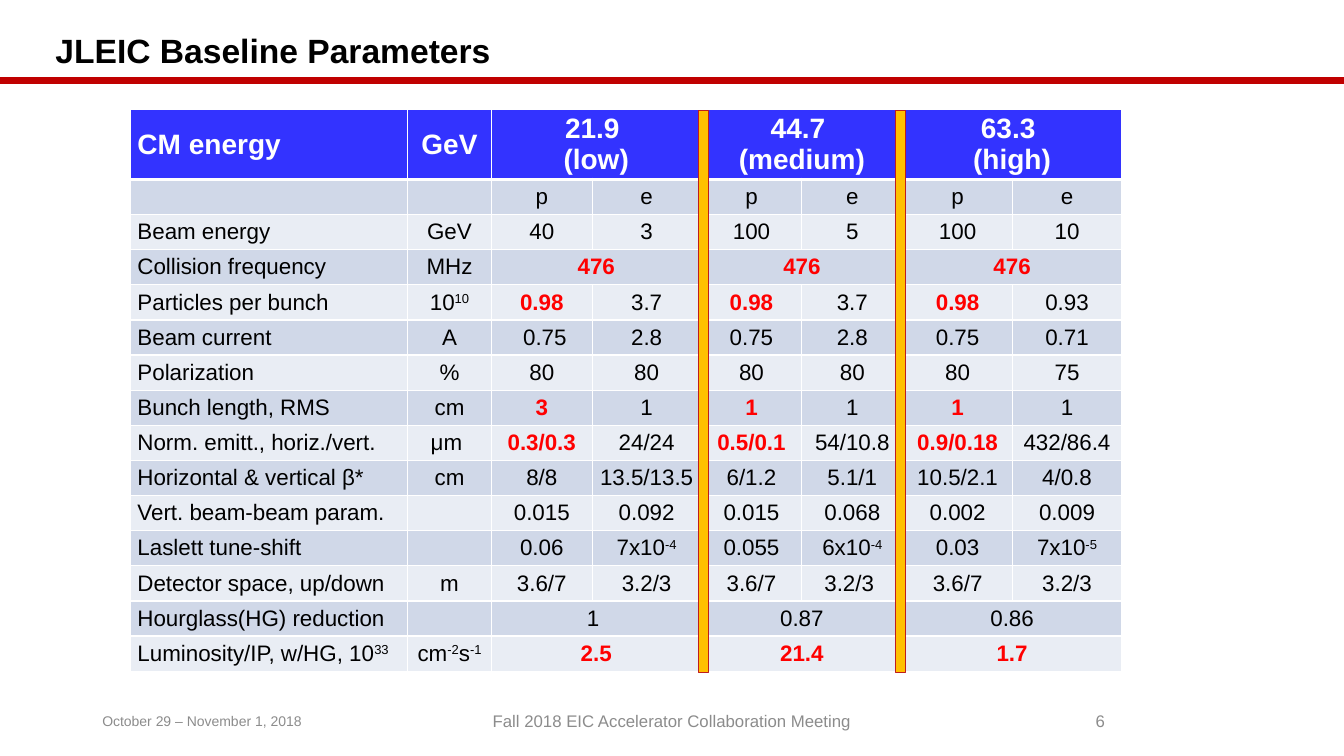
from lxml import etree
from pptx import Presentation
from pptx.dml.color import RGBColor
from pptx.enum.shapes import MSO_CONNECTOR as Connector, MSO_SHAPE as Shape
from pptx.enum.text import MSO_ANCHOR as Anchor, MSO_AUTO_SIZE as AutoSize, PP_ALIGN as Align
from pptx.oxml.ns import qn
from pptx.util import Pt

FONT = "Arial"
HEADER_BLUE, BANDS = "3333FF", ("D0D8E8", "E9EDF4")
BLACK, WHITE, RED, GREY = "000000", "FFFFFF", "FF0000", "8C8C8C"

COLUMN_WIDTHS = (198, 59.8, 72, 77.8, 72, 72, 78.5, 77.8)
ROW_HEIGHT = 25.1

# "!" marks a red bold value, "^" toggles superscript, None continues a merged cell
ROWS = [
    ["CM energy", "GeV", "21.9 \n(low)", None, "44.7 \n(medium)", None, "63.3 \n(high)", None],
    ["", "", "p", "e", "p", "e", "p", "e"],
    ["Beam energy", "GeV", "40", "3", "100", "5", "100", "10"],
    ["Collision frequency", "MHz", "!476", None, "!476", None, "!476", None],
    ["Particles per bunch", "10^10", "!0.98", "3.7", "!0.98", "3.7", "!0.98", "0.93"],
    ["Beam current", "A", " 0.75", "2.8", "0.75", "2.8", "0.75", "0.71"],
    ["Polarization", "%", "80", "80", "80", "80", "80", "75"],
    ["Bunch length, RMS", "cm", "!3", "1", "!1", "1", "!1", "1"],
    ["Norm. emitt., horiz./vert.", "μm ", "!0.3/0.3", "24/24", "!0.5/0.1", "54/10.8",
     "!0.9/0.18", "432/86.4"],
    ["Horizontal & vertical β*", "cm", "8/8", "13.5/13.5", "6/1.2", "5.1/1", "10.5/2.1", "4/0.8"],
    ["Vert. beam-beam param.", "", "0.015", "0.092", "0.015", "0.068", "0.002", "0.009"],
    ["Laslett tune-shift", "", "0.06", "7x10^-4", "0.055", "6x10^-4", "0.03", "7x10^-5"],
    ["Detector space, up/down", "m", "3.6/7", "3.2/3", "3.6/7", "3.2/3 ", "3.6/7", "3.2/3"],
    ["Hourglass(HG) reduction", "", "1 ", None, "0.87", None, "0.86", None],
    ["Luminosity/IP, w/HG, 10^33", "cm^-2^s^-1", "!2.5", None, "!21.4", None, "!1.7", None],
]


def color(value):
    return RGBColor.from_string(value)


def set_all(target, values):
    for name, value in values.items():
        setattr(target, name, value)


def write_text(frame, text, size, text_color, align=Align.LEFT, bold=False):
    for number, line in enumerate(text.split("\n")):
        paragraph = frame.paragraphs[0] if number == 0 else frame.add_paragraph()
        paragraph.alignment = align
        for part_number, part in enumerate(line.split("^")):
            if not part:
                continue
            run = paragraph.add_run()
            run.text = part
            set_all(run.font, {"name": FONT, "size": Pt(size), "bold": bold})
            run.font.color.rgb = color(text_color)
            if part_number % 2:
                run.font._element.set("baseline", "30000")


def add_title(slide, text):
    title = slide.shapes.title
    set_all(title, {"left": Pt(32.4), "top": Pt(18.7), "width": Pt(888.5), "height": Pt(38.2)})
    set_all(title.text_frame, {"vertical_anchor": Anchor.MIDDLE, "auto_size": AutoSize.NONE})
    write_text(title.text_frame, text, 24, BLACK, bold=True)
    title.text_frame.paragraphs[0].line_spacing = 0.9


def add_rule(slide, left, right, top):
    rule = slide.shapes.add_connector(Connector.STRAIGHT, Pt(left), Pt(top), Pt(right), Pt(top))
    rule.line.color.rgb = color("C00000")
    rule.line.width = Pt(4.5)
    etree.SubElement(rule._element.spPr, qn("a:effectLst"))


def add_footer(slide, left, width, text, size, align):
    box = slide.shapes.add_textbox(Pt(left), Pt(500.4), Pt(width), Pt(28.8))
    set_all(box.text_frame, {"word_wrap": True, "vertical_anchor": Anchor.MIDDLE})
    write_text(box.text_frame, text, size, GREY, align)


def set_borders(cell, widths):
    properties = cell._tc.get_or_add_tcPr()
    for side, width in widths.items():
        line = etree.SubElement(properties, qn(f"a:ln{side}"), w=str(Pt(width)))
        fill = etree.SubElement(line, qn("a:solidFill"))
        etree.SubElement(fill, qn("a:srgbClr"), val=WHITE)


def format_cell(cell, row, column, text):
    set_all(cell, {"margin_left": Pt(5), "margin_right": Pt(5), "margin_top": 0,
                   "margin_bottom": 0, "vertical_anchor": Anchor.MIDDLE})
    set_borders(cell, {"L": 1, "R": 1, "T": 3 if row == 1 else 1, "B": 3 if row == 0 else 1})
    cell.fill.solid()
    cell.fill.fore_color.rgb = color(BANDS[(row - 1) % 2] if row else HEADER_BLUE)
    if not text:
        return
    red = text.startswith("!")
    text_color = RED if red else BLACK if row else WHITE
    write_text(cell.text_frame, text.lstrip("!"), 16 if row else 20, text_color,
               Align.CENTER if column else Align.LEFT, red or row == 0)


def add_parameter_table(slide, left, top):
    heights = [2 * ROW_HEIGHT] + [ROW_HEIGHT] * (len(ROWS) - 1)
    table = slide.shapes.add_table(len(ROWS), len(COLUMN_WIDTHS), Pt(left), Pt(top),
                                   Pt(sum(COLUMN_WIDTHS)), Pt(sum(heights))).table
    for column, width in zip(table.columns, COLUMN_WIDTHS):
        column.width = Pt(width)
    for row, height in zip(table.rows, heights):
        row.height = Pt(height)
    for row, texts in enumerate(ROWS):
        for column, text in enumerate(texts):
            cell = table.cell(row, column)
            format_cell(cell, row, column, text)
            if text is None:
                table.cell(row, column - 1).merge(cell)


def add_divider(slide, left):
    bar = slide.shapes.add_shape(Shape.RECTANGLE, Pt(left), Pt(79.2), Pt(7.2), Pt(401))
    bar.shadow.inherit = False
    bar.fill.solid()
    bar.fill.fore_color.rgb = color("FFC000")
    bar.line.color.rgb = color("BE1D1D")
    bar.line.width = Pt(0.5)


def main():
    presentation = Presentation()
    set_all(presentation, {"slide_width": Pt(960), "slide_height": Pt(540)})
    slide = presentation.slides.add_slide(presentation.slide_layouts[5])

    # Heading
    add_rule(slide, -1.4, 960, 57.6)
    add_title(slide, "JLEIC Baseline Parameters")

    # Footer
    add_footer(slide, 66, 216, "October 29 – November 1, 2018", 10, Align.LEFT)
    add_footer(slide, 318, 324, "Fall 2018 EIC Accelerator Collaboration Meeting", 12, Align.CENTER)
    add_footer(slide, 678, 216, "6", 12, Align.CENTER)

    # Parameters, with bars between the energy settings
    add_parameter_table(slide, 93.2, 78)
    for left in (499, 639.4):
        add_divider(slide, left)

    presentation.save("out.pptx")


if __name__ == "__main__":
    main()
